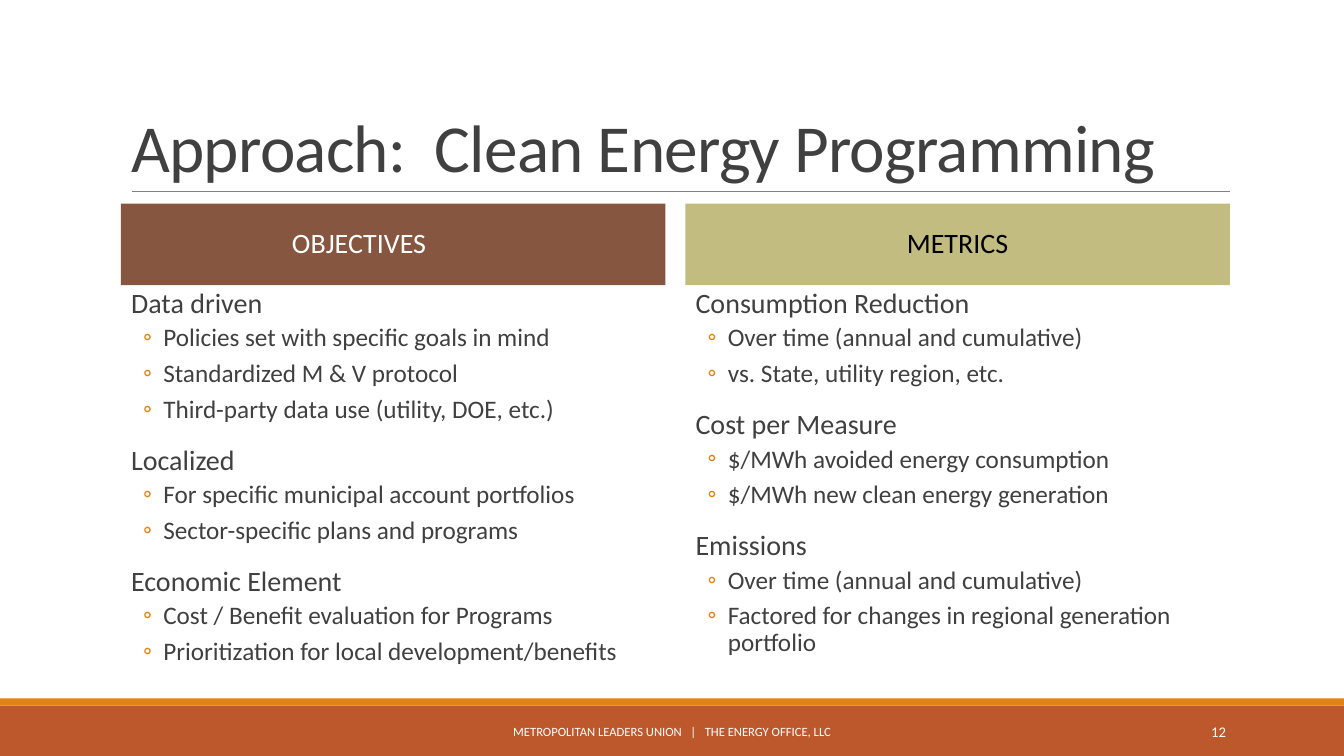
from lxml.etree import SubElement
from pptx import Presentation
from pptx.dml.color import RGBColor
from pptx.enum.shapes import MSO_CONNECTOR as Link, MSO_SHAPE as Form
from pptx.enum.text import MSO_ANCHOR as Anchor, PP_ALIGN as Align
from pptx.oxml.ns import qn
from pptx.util import Inches, Pt

INK, WHITE, BLACK = "404040", "FFFFFF", "000000"
AMBER, RUST, GRAY = "E48312", "BD582C", "808080"


def tint(code):
    """Turn a hex string into a colour."""
    return RGBColor.from_string(code)


class Deck:
    """Hold the style and the current slide on a grid of 100 columns and 75 rows."""

    font = "Calibri"

    def __init__(self):
        """Open a wide deck with one title-only slide."""
        self.file = Presentation()
        self.file.slide_width, self.file.slide_height = Inches(13.33), Inches(7.5)
        self.col, self.row = self.file.slide_width / 100, self.file.slide_height / 75
        self.slide = self.file.slides.add_slide(self.file.slide_layouts[5])

    def place(self, x, y, w, h):
        """Turn grid units into lengths."""
        return int(x * self.col), int(y * self.row), int(w * self.col), int(h * self.row)

    def style(self, para, size, color, align=Align.LEFT, lead=1.0, gaps=(0, 0)):
        """Format a paragraph and its runs."""
        para.alignment, para.line_spacing = align, lead
        para.space_before, para.space_after = Pt(gaps[0]), Pt(gaps[1])
        for run in para.runs:
            run.font.name, run.font.size = self.font, Pt(size)
            run.font.color.rgb = tint(color)

    def title(self, text, *area):
        """Fill and move the title."""
        head = self.slide.shapes.title
        head.left, head.top, head.width, head.height = self.place(*area)
        frame = head.text_frame
        frame.text, frame.vertical_anchor = text, Anchor.BOTTOM
        self.style(frame.paragraphs[0], 48, INK, lead=0.85)
        frame.paragraphs[0].runs[0].font._element.set("spc", "-50")

    def block(self, fill, *area):
        """Draw a plain filled box."""
        box = self.slide.shapes.add_shape(Form.RECTANGLE, *self.place(*area))
        box.shadow.inherit = False
        box.fill.solid()
        box.fill.fore_color.rgb = tint(fill)
        box.line.fill.background()
        return box

    def header(self, text, fill, color, right, *area):
        """Draw a column header with a given right inset."""
        frame = self.block(fill, *area).text_frame
        frame.text, frame.vertical_anchor = text, Anchor.MIDDLE
        frame.margin_right = int(right * self.col)
        self.style(frame.paragraphs[0], 20, color, Align.CENTER, 0.9, (12, 2))

    def rule(self, x, y, w):
        """Draw a thin level line."""
        left, top, wide, _ = self.place(x, y, w, 0)
        line = self.slide.shapes.add_connector(Link.STRAIGHT, left, top, left + wide, top)
        line.line.color.rgb, line.line.width = tint(GRAY), Pt(0.5)
        SubElement(line._element.spPr, qn("a:effectLst"))

    def frame(self, *area):
        """Add a wrapping text box and return its frame."""
        frame = self.slide.shapes.add_textbox(*self.place(*area)).text_frame
        frame.word_wrap = True
        return frame

    def note(self, text, size, align, *area):
        """Add a line of footer text."""
        frame = self.frame(*area)
        frame.text, frame.vertical_anchor = text, Anchor.MIDDLE
        self.style(frame.paragraphs[0], size, WHITE, align)

    def indent(self, para, left, hang=0.0, mark=None):
        """Set the indent in columns, with an optional bullet."""
        props = para._p.get_or_add_pPr()
        props.set("marL", str(int(left * self.col)))
        props.set("indent", str(int(-hang * self.col)))
        if mark:
            paint = SubElement(props, qn("a:buClr"))
            SubElement(paint, qn("a:srgbClr"), val=AMBER)
            SubElement(props, qn("a:buFont"), typeface=self.font)
            SubElement(props, qn("a:buChar"), char=mark)

    def topics(self, groups, *area):
        """List topics with bulleted points below each."""
        frame = self.frame(*area)
        frame.margin_left = frame.margin_right = 0
        lines = [(text, i > 0) for name, points in groups.items()
                 for i, text in enumerate([name, *points])]
        for i, (text, sub) in enumerate(lines):
            para = frame.add_paragraph() if i else frame.paragraphs[0]
            para.text = text
            if sub:
                para.level = 1
                self.style(para, 18, INK, lead=0.9, gaps=(2, 4))
                self.indent(para, 3.15, 1.5, "◦")
            else:
                self.style(para, 20, INK, lead=0.9, gaps=(12, 2))
                self.indent(para, 0.75)


GOALS = {
    "Data driven": ["Policies set with specific goals in mind",
                    "Standardized M & V protocol",
                    "Third-party data use (utility, DOE, etc.)"],
    "Localized": ["For specific municipal account portfolios",
                  "Sector-specific plans and programs"],
    "Economic Element": ["Cost / Benefit evaluation for Programs",
                         "Prioritization for local development/benefits"],
}
GAUGES = {
    "Consumption Reduction": ["Over time (annual and cumulative)",
                              "vs. State, utility region, etc."],
    "Cost per Measure": ["$/MWh avoided energy consumption",
                         "$/MWh new clean energy generation"],
    "Emissions": ["Over time (annual and cumulative)",
                  "Factored for changes in regional generation portfolio"],
}
SIDES = [("OBJECTIVES", "865640", WHITE, 5.8, GOALS),
         ("METRICS", "C2BC80", BLACK, 0.75, GAUGES)]


def main():
    """Build and save the slide."""
    deck = Deck()
    deck.block(RUST, 0, 70, 100, 5)
    deck.block(AMBER, 0, 69.3, 100, 0.7)
    deck.rule(9.8, 19, 81.75)
    deck.title("Approach:  Clean Energy Programming", 9, 3.1, 82.5, 15.9)
    for i, (name, fill, color, right, groups) in enumerate(SIDES):
        left = 9 + 42 * i
        deck.header(name, fill, color, right, left, 20.2, 40.5, 8.1)
        deck.topics(groups, left, 28.2, 40.5, 40.9)
    deck.note("METROPOLITAN LEADERS UNION   |   THE ENERGY OFFICE, LLC", 9,
              Align.CENTER, 30.25, 70.6, 39.5, 4)
    deck.note("12", 10.5, Align.RIGHT, 81.25, 70.6, 10.7, 4)
    deck.file.save("out.pptx")


if __name__ == "__main__":
    main()
